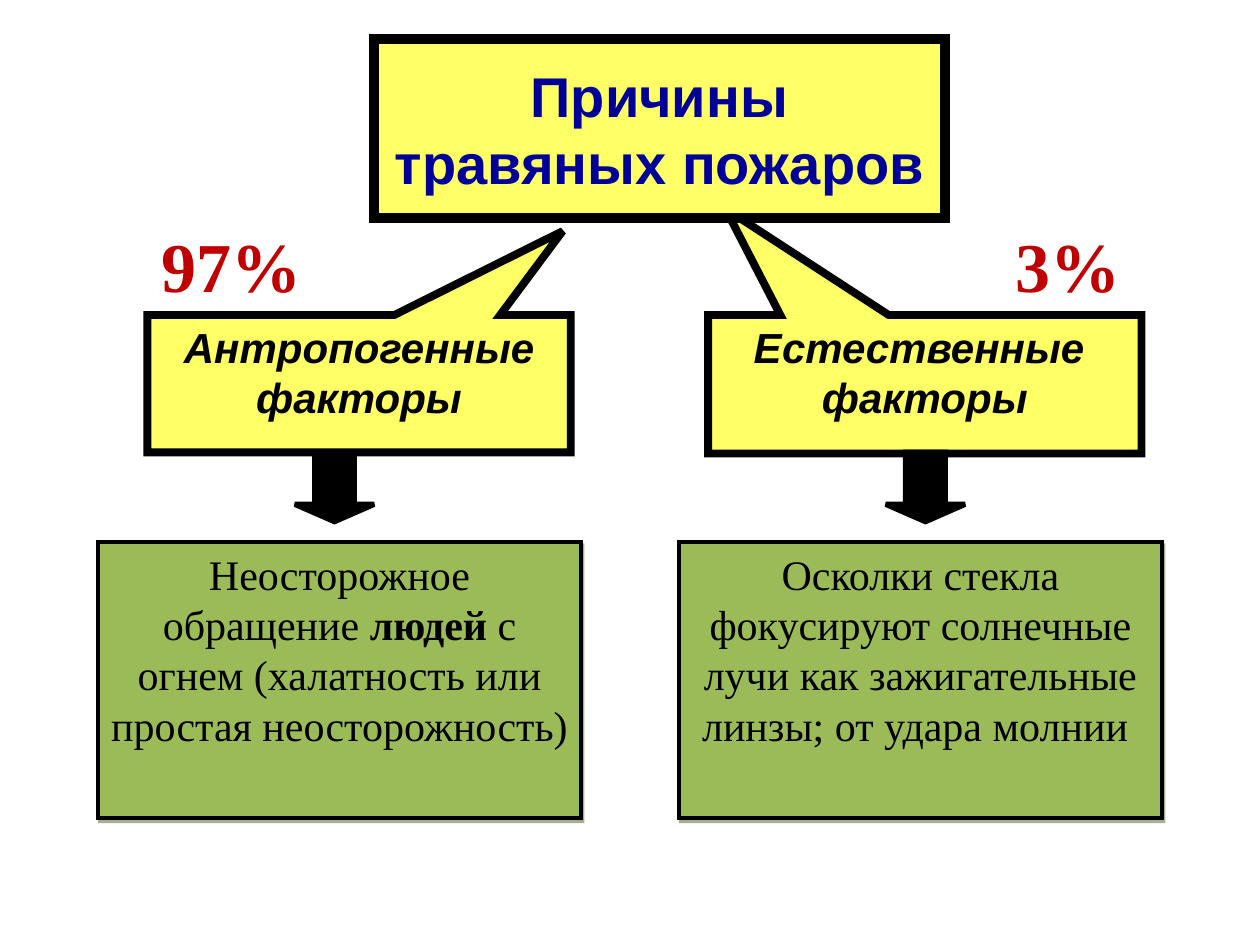
from collections import namedtuple
from dataclasses import dataclass

from lxml.etree import SubElement
from pptx import Presentation
from pptx.dml.color import RGBColor
from pptx.enum.shapes import MSO_SHAPE
from pptx.enum.text import MSO_ANCHOR, MSO_AUTO_SIZE, PP_ALIGN
from pptx.oxml.ns import qn
from pptx.util import Inches, Pt

Box = namedtuple("Box", "left top width height")


@dataclass(frozen=True)
class Theme:
    """Colours and type formats of the slide."""
    yellow = RGBColor(0xFF, 0xFF, 0x66)
    green = RGBColor(0x9B, 0xBB, 0x59)
    black = RGBColor(0, 0, 0)
    navy = RGBColor(0, 0, 0x99)
    red = RGBColor(0xC0, 0, 0)
    shade = "4E6128"
    title = {"name": "Arial", "size": Pt(32), "bold": True}
    factor = {"name": "Arial", "size": Pt(24), "bold": True, "italic": True}
    share = {"name": "Times New Roman", "size": Pt(40), "bold": True}
    cause = {"name": "Times New Roman", "size": Pt(24)}


THEME = Theme()
BRANCHES = [
    {
        "box": Box(0.78, 1.72, 3.83, 4.77),
        "share": ("97%", 0.39, 1.33),
        "factor": (["Антропогенные факторы"], 0.39, 3.36, 1.09),
        "tip": (0.481, -1.111),
        "arrow_offset": 1.56,
        "cause": [("Неосторожное обращение ", False), ("людей ", True),
                  ("с огнем (халатность или простая неосторожность)", False)],
    },
    {
        "box": Box(5.39, 1.72, 3.83, 4.77),
        "share": ("3%", 2.5, 1.17),
        "factor": (["Естественные ", "факторы"], 0.23, 3.44, 1.1),
        "tip": (-0.46, -1.267),
        "arrow_offset": 1.64,
        "cause": [("Осколки стекла фокусируют солнечные лучи как "
                   "зажигательные линзы; от удара молнии ", False)],
    },
]


def add_outlined(slide, preset, box, fill, line_width, adjustments=()):
    """Add a filled preset shape with a black mitred outline."""
    shape = slide.shapes.add_shape(preset, *map(Inches, box))
    shape.shadow.inherit = False
    shape.fill.solid()
    shape.fill.fore_color.rgb = fill
    shape.line.color.rgb = THEME.black
    shape.line.width = Pt(line_width)
    SubElement(shape.line._ln, qn("a:miter"), lim="800000")
    for index, value in enumerate(adjustments):
        shape.adjustments[index] = value
    return shape


def write(shape, paragraphs, font_format, color, anchor=MSO_ANCHOR.TOP, wrap=True):
    """Write centred paragraphs, each a list of (text, bold) runs."""
    frame = shape.text_frame
    frame.word_wrap = wrap
    frame.vertical_anchor = anchor
    for index, runs in enumerate(paragraphs):
        paragraph = frame.paragraphs[0] if index == 0 else frame.add_paragraph()
        paragraph.alignment = PP_ALIGN.CENTER
        for text, bold in runs:
            run = paragraph.add_run()
            run.text = text
            for key, value in {"bold": bold, **font_format}.items():
                setattr(run.font, key, value)
            run.font.color.rgb = color


def add_offset_shadow(shape):
    """Give a shape a hard, half-transparent shadow to the lower right."""
    effects = shape._element.spPr.find(qn("a:effectLst"))
    shadow = SubElement(effects, qn("a:outerShdw"), dist=str(Pt(2.2)),
                        dir=str(63 * 60000), algn="ctr", rotWithShape="0")
    color = SubElement(shadow, qn("a:srgbClr"), val=THEME.shade)
    SubElement(color, qn("a:alpha"), val="50000")


def add_title(slide, box):
    """Place the framed heading."""
    heading = add_outlined(slide, MSO_SHAPE.RECTANGLE, box, THEME.yellow, 6)
    lines = [[(line, True)] for line in ("Причины", "травяных пожаров")]
    write(heading, lines, THEME.title, THEME.navy, MSO_ANCHOR.MIDDLE, wrap=False)


def add_branch(slide, box, branch):
    """Place one branch: share, factor callout, arrow and cause panel."""
    factor_lines, offset, width, height = branch["factor"]
    factor = add_outlined(
        slide, MSO_SHAPE.RECTANGULAR_CALLOUT,
        Box(box.left + offset, box.top + 0.78, width, height),
        THEME.yellow, 4.5, branch["tip"])
    write(factor, [[(line, True)] for line in factor_lines], THEME.factor, THEME.black)

    add_outlined(slide, MSO_SHAPE.DOWN_ARROW,
                 Box(box.left + branch["arrow_offset"], box.top + 1.87, 0.63, 0.55),
                 THEME.black, 3, (0.5, 0.25))

    percent, offset, width = branch["share"]
    share = slide.shapes.add_textbox(
        *map(Inches, Box(box.left + offset, box.top, width, 0.77)))
    write(share, [[(percent, True)]], THEME.share, THEME.red)
    share.text_frame.auto_size = MSO_AUTO_SIZE.SHAPE_TO_FIT_TEXT

    panel_height = 2.19
    cause = add_outlined(
        slide, MSO_SHAPE.RECTANGLE,
        Box(box.left, box.top + box.height - panel_height, box.width, panel_height),
        THEME.green, 2.25)
    add_offset_shadow(cause)
    write(cause, [branch["cause"]], THEME.cause, THEME.black)
    cause.text_frame.paragraphs[0].space_after = Pt(10)


def main():
    """Build and save the slide."""
    deck = Presentation()
    deck.slide_width, deck.slide_height = Inches(10), Inches(7.5)
    slide = deck.slides.add_slide(deck.slide_layouts[6])
    for branch in BRANCHES:
        add_branch(slide, branch["box"], branch)
    add_title(slide, Box(2.97, 0.31, 4.53, 1.42))
    deck.save("out.pptx")


if __name__ == "__main__":
    main()
